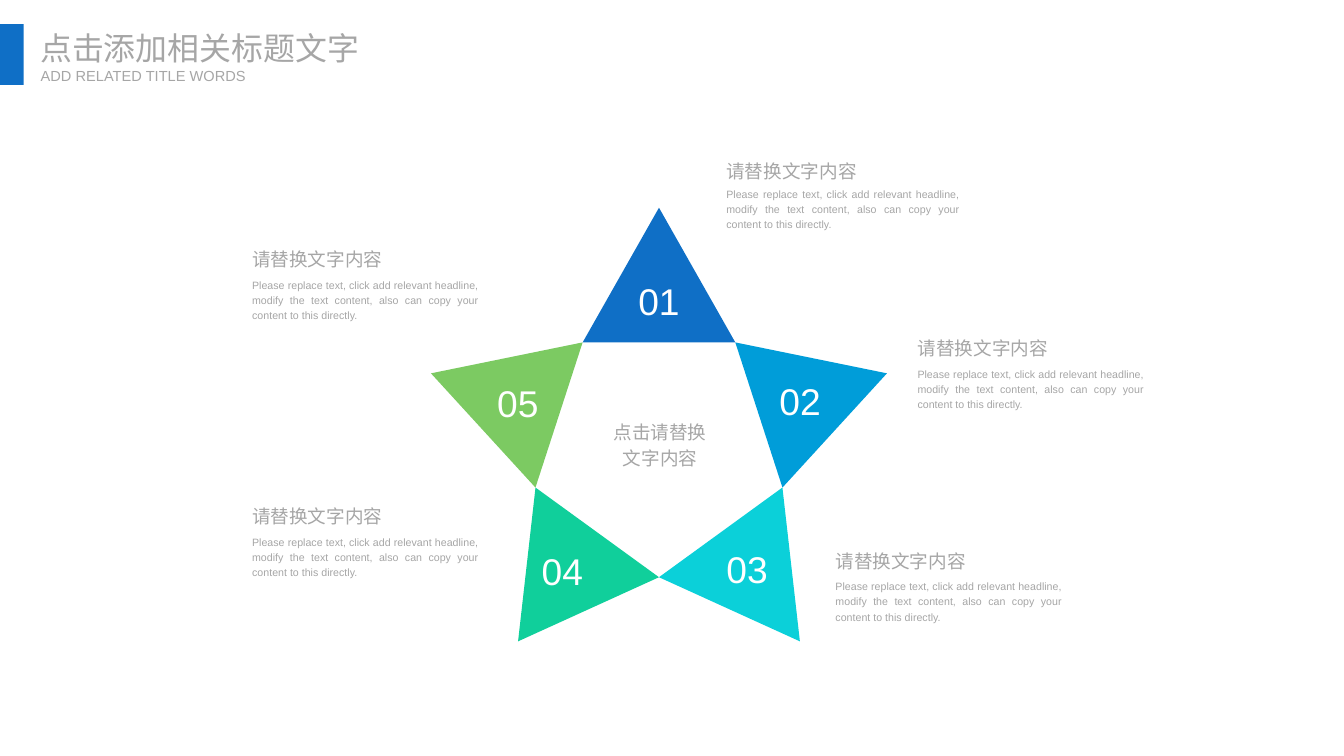
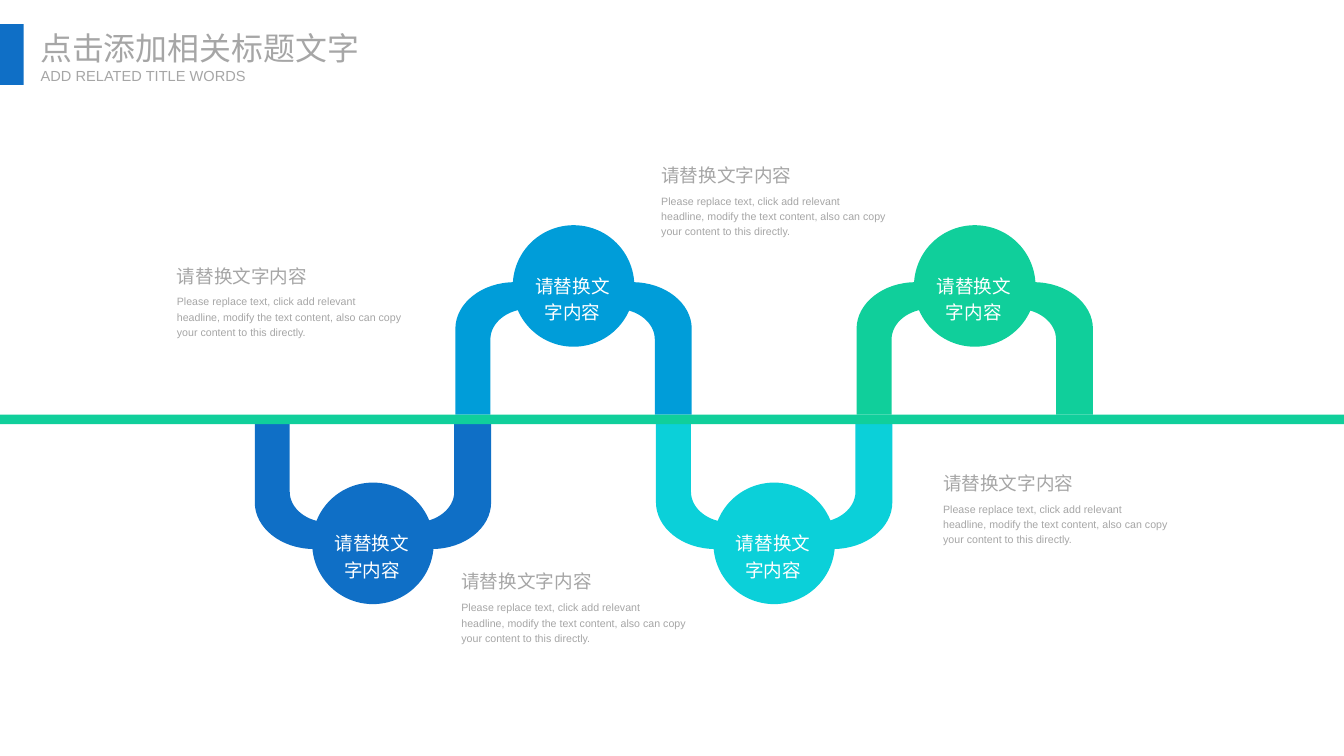
import math

import pptx
import pptx.dml.color
import pptx.enum.shapes
import pptx.enum.text
import pptx.oxml
import pptx.oxml.ns
import pptx.util

Cm = pptx.util.Cm
ALIGN = pptx.enum.text.PP_ALIGN
ANCHOR = pptx.enum.text.MSO_ANCHOR
SHAPE = pptx.enum.shapes.MSO_SHAPE

COLOURS = {
    "blue": "0F6FC6",
    "sky": "009DD9",
    "cyan": "0BD0D9",
    "teal": "10CF9B",
    "green": "7CCA62",
    "grey": "A6A6A6",
    "white": "FFFFFF",
}
SLIDE_WIDTH, SLIDE_HEIGHT = 35.71, 20.09
CURVE_PULL = 0.55

STYLES = {
    "title": {"size": 24, "font": "Noto Sans CJK SC", "spacing": 1.0},
    "subtitle": {"size": 11, "spacing": 1.0},
    "heading": {"size": 14},
    "body": {"size": 8},
    "justified": {"size": 8, "align": ALIGN.JUSTIFY},
    "centre": {"size": 14, "align": ALIGN.CENTER},
    "circle": {"size": 14, "align": ALIGN.CENTER, "colour": "white"},
    "number": {"size": 28, "align": ALIGN.CENTER, "colour": "white"},
}
DEFAULT_STYLE = {"font": "Arial", "colour": "grey", "align": ALIGN.LEFT, "spacing": 1.2}

TITLE = "点击添加相关标题文字"
SUBTITLE = "ADD RELATED TITLE WORDS"
HEADING = "请替换文字内容"
BODY = (
    "Please replace text, click add relevant headline, modify the text content, "
    "also can copy your content to this directly."
)


def rgb(name):
    return pptx.dml.color.RGBColor.from_string(COLOURS[name])


def write(shape, text, style_name, insets=(0, 0, 0, 0), anchor=ANCHOR.TOP):
    style = {**DEFAULT_STYLE, **STYLES[style_name]}
    frame = shape.text_frame
    sides = ("margin_left", "margin_top", "margin_right", "margin_bottom")
    frame_format = {
        "word_wrap": True,
        "auto_size": pptx.enum.text.MSO_AUTO_SIZE.NONE,
        "vertical_anchor": anchor,
        **{side: Cm(inset) for side, inset in zip(sides, insets)},
    }
    paragraph = frame.paragraphs[0]
    run = paragraph.add_run()
    run.text = text
    paragraph_format = {
        "alignment": style["align"],
        "line_spacing": style["spacing"],
        "space_before": pptx.util.Pt(0),
    }
    font_format = {"size": pptx.util.Pt(style["size"]), "bold": False, "name": style["font"]}
    for target, values in (
        (frame, frame_format),
        (paragraph, paragraph_format),
        (run.font, font_format),
    ):
        for attribute, value in values.items():
            setattr(target, attribute, value)
    run.font.color.rgb = rgb(style["colour"])
    east_asian = pptx.oxml.parse_xml(
        f'<a:ea {pptx.oxml.ns.nsdecls("a")} typeface="{style["font"]}"/>'
    )
    run._r.get_or_add_rPr().append(east_asian)


def add_text(slide, box, text, style_name, insets=(0, 0, 0, 0)):
    shape = slide.shapes.add_textbox(*map(Cm, box))
    write(shape, text, style_name, insets)


def paint(shape, colour):
    shape.shadow.inherit = False
    shape.fill.solid()
    shape.fill.fore_color.rgb = rgb(colour)
    shape.line.fill.background()
    return shape


def add_preset(slide, kind, box, colour):
    return paint(slide.shapes.add_shape(kind, *map(Cm, box)), colour)


def add_outline(slide, points, colour):
    start, *rest = [(Cm(x), Cm(y)) for x, y in points]
    builder = slide.shapes.build_freeform(*start)
    builder.add_line_segments(rest, close=True)
    return paint(builder.convert_to_shape(), colour)


def round_corners(shape, points, corners):
    segments = shape._element.xpath(".//a:lnTo")
    for index, corner in corners.items():
        start, end = points[index - 1], points[index]
        controls = [
            tuple(p + CURVE_PULL * (c - p) for p, c in zip(point, corner))
            for point in (start, end)
        ]
        stops = "".join(
            f'<a:pt x="{Cm(x) - shape.left}" y="{Cm(y) - shape.top}"/>'
            for x, y in (*controls, end)
        )
        curve = pptx.oxml.parse_xml(
            f'<a:cubicBezTo {pptx.oxml.ns.nsdecls("a")}>{stops}</a:cubicBezTo>'
        )
        segment = segments[index - 1]
        segment.getparent().replace(segment, curve)


def add_titled_slide(presentation):
    slide = presentation.slides.add_slide(presentation.slide_layouts[5])
    add_preset(slide, SHAPE.RECTANGLE, (0, 0.64, 0.63, 1.62), "blue")
    title = slide.shapes.title
    placement = {"left": 1.07, "top": 0.75, "width": 8.6, "height": 1.02}
    for attribute, value in placement.items():
        setattr(title, attribute, Cm(value))
    write(title, TITLE, "title", anchor=ANCHOR.MIDDLE)
    add_text(slide, (1.08, 1.78, 6, 0.48), SUBTITLE, "subtitle")
    return slide


def add_caption(slide, left, top, width, gap, body_style, insets=(0, 0, 0, 0)):
    margin = insets[1] + insets[3]
    add_text(slide, (left, top, 4.9, 0.66 + margin), HEADING, "heading", insets)
    add_text(slide, (left, top + gap, width, 1.22 + margin), BODY, body_style, insets)


def polar(centre, radius, degrees):
    angle = math.radians(degrees)
    return centre[0] + radius * math.sin(angle), centre[1] - radius * math.cos(angle)


def add_star(slide, centre, outer_radius, inner_radius, points):
    for index, (colour, number_x, number_y) in enumerate(points):
        angle = 72 * index
        corners = [
            polar(centre, inner_radius, angle - 36),
            polar(centre, outer_radius, angle),
            polar(centre, inner_radius, angle + 36),
        ]
        add_outline(slide, corners, colour)
        number_box = (centre[0] + number_x - 0.7, centre[1] + number_y - 0.65, 1.4, 1.3)
        add_text(slide, number_box, f"{index + 1:02}", "number")
    add_text(slide, (centre[0] - 1.42, centre[1] - 0.83, 2.9, 1.37), "点击请替换文字内容", "centre")


def add_star_slide(presentation):
    slide = add_titled_slide(presentation)
    points = [
        ("blue", 0, -4.08),
        ("sky", 3.75, -1.41),
        ("cyan", 2.34, 3.04),
        ("teal", -2.57, 3.09),
        ("green", -3.75, -1.38),
    ]
    add_star(slide, (17.51, 11.89), 6.37, 3.45, points)
    captions = [
        (19.3, 4.14, 6.2, 0.78),
        (24.38, 8.84, 6.02, 0.86),
        (22.2, 14.49, 6.02, 0.86),
        (6.7, 13.29, 6.02, 0.88),
        (6.7, 6.46, 6.02, 0.88),
    ]
    for caption in captions:
        add_caption(slide, *caption, "justified")


def add_loop(slide, left, edge, axis, direction, colour):
    width, depth, left_leg, right_leg, thickness = 6.28, 3.52, 0.93, 0.98, 0.71
    outer_x, outer_y, inner_x, inner_y = 1.57, 1.24, 1.02, 0.81
    inner_depth, inner_right = depth - thickness, width - right_leg

    def place(x, y):
        return left + x, edge + direction * y

    points = [
        place(0, 0),
        place(left_leg, 0),
        place(left_leg, inner_depth - inner_y),
        place(left_leg + inner_x, inner_depth),
        place(inner_right - inner_x, inner_depth),
        place(inner_right, inner_depth - inner_y),
        place(inner_right, 0),
        place(width, 0),
        place(width, depth - outer_y),
        place(width - outer_x, depth),
        place(outer_x, depth),
        place(0, depth - outer_y),
    ]
    corners = {
        3: place(left_leg, inner_depth),
        5: place(inner_right, inner_depth),
        9: place(width, depth),
        11: place(0, depth),
    }
    round_corners(add_outline(slide, points, colour), points, corners)
    diameter = 3.23
    circle_left = left + (width - diameter) / 2
    circle_top = axis + direction * 3.42 - diameter / 2
    circle = add_preset(slide, SHAPE.OVAL, (circle_left, circle_top, diameter, diameter), colour)
    write(circle, HEADING, "circle", (0, 0.72, 0.05, 0))


def add_wave_slide(presentation):
    slide = add_titled_slide(presentation)
    axis, step = 11.02, 5.33
    for index, colour in enumerate(("blue", "sky", "cyan", "teal")):
        direction = -1 if index % 2 else 1
        edge = axis if direction < 0 else axis + 0.05
        add_loop(slide, 6.77 + step * index, edge, axis, direction, colour)
    add_preset(slide, SHAPE.RECTANGLE, (0, axis, SLIDE_WIDTH, 0.25), "teal")
    for left, top in ((4.45, 6.78), (12.01, 14.91), (17.32, 4.11), (24.81, 12.29)):
        add_caption(slide, left, top, 6.48, 0.87, "body", (0.25, 0.13, 0.25, 0.13))


def main():
    presentation = pptx.Presentation()
    presentation.slide_width = Cm(SLIDE_WIDTH)
    presentation.slide_height = Cm(SLIDE_HEIGHT)
    add_star_slide(presentation)
    add_wave_slide(presentation)
    presentation.save("out.pptx")


if __name__ == "__main__":
    main()
